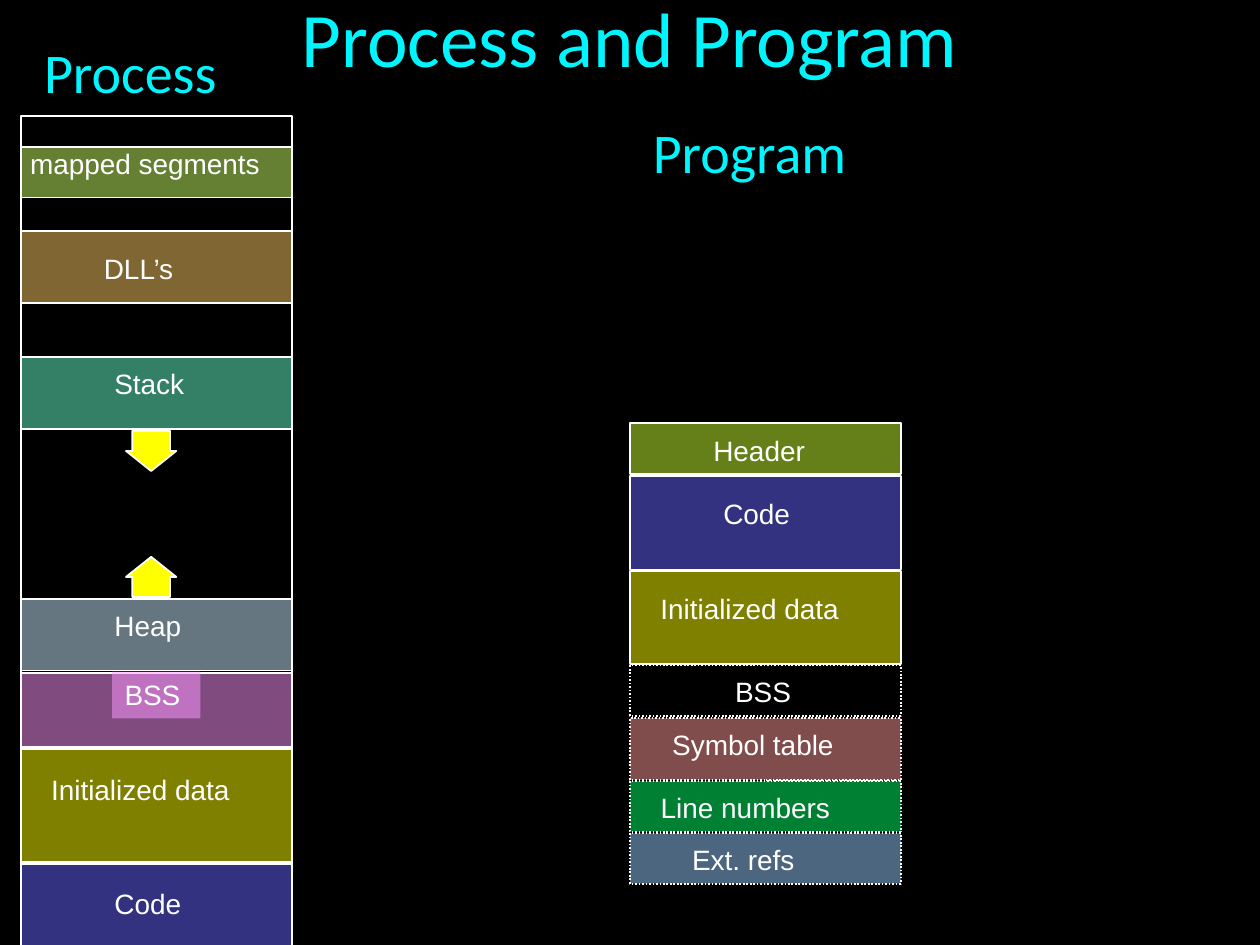
from dataclasses import dataclass

from lxml import etree
from pptx import Presentation
from pptx.dml.color import RGBColor
from pptx.enum import dml, shapes, text
from pptx.oxml import ns
from pptx.util import Pt


@dataclass(frozen=True)
class Theme:
    background: str = "000000"
    heading: str = "00F6FF"
    heading_outline: str = "5DD4FF"
    ink: str = "FFFFFF"
    arrow: str = "FFFF00"
    heading_font: str = "Calibri"
    label_font: str = "Arial"
    title_size: int = 44
    heading_size: int = 32
    label_size: int = 16
    line: float = 1


THEME = Theme()
CODE, DATA, BSS = "6565FF", "FFFF00", "FF99FF"

# Content, in points: placeholder text, box
TITLE = ("Process and Program", (18, 0, 684, 41.8))
HEADINGS = [
    ("Process", (18, 18, 336, 428.4)),
    ("Program", (365.8, 63.4, 342, 428.4)),
]

# Segments: label, fill, top, height, label left (from column), label top, label width
PROCESS_LEFT, PROGRAM_LEFT, COLUMN_WIDTH = 12.1, 360, 154.8
PROCESS_FRAME = (66.2, 491)
LABEL_HEIGHT = 26.7
PROCESS = [
    ("Code", CODE, 493.9, 64, 46.2, 503.3, 52.6),
    ("Initialized data", DATA, 427.9, 64.6, 10, 437.8, 116.6),
    ("BSS", BSS, 384.7, 42.2, 52, 383.8, 50.4),
    ("Heap", "CCECFF", 342.2, 41, 46.2, 344.4, 52.6),
    ("Stack", "66FFCC", 204.2, 41, 46.2, 206.2, 54.7),
    ("DLL’s", "FFCC66", 132.2, 41, 40.2, 140.4, 55.4),
    ("mapped segments", "CCFF66", 84.2, 28.8, -2, 80.2, 146.2),
]
PROGRAM = [
    ("Header", "CCFF33", 241.9, 28.8, 40.3, 244.3, 67),
    ("Code", CODE, 272.2, 53.3, 46.1, 280.3, 52.6),
    ("Initialized data", DATA, 326.2, 53.3, 10.1, 334.3, 116.6),
    ("BSS", None, 380.2, 28.8, 52.6, 382, 46.8),
    ("Symbol table", "FF9999", 410.4, 35.3, 16.6, 412.2, 107.3),
    ("Line numbers", "00FF66", 446.4, 28.8, 10.1, 448.2, 111.6),
    ("Ext. refs", "99CCFF", 476.2, 28.8, 28.1, 478.1, 73.4),
]
OPTIONAL_SEGMENTS = {"BSS", "Symbol table", "Line numbers", "Ext. refs"}
ARROWS = [
    (shapes.MSO_SHAPE.UP_ARROW, 318.2),
    (shapes.MSO_SHAPE.DOWN_ARROW, 246.2),
]
ARROW_LEFT, ARROW_WIDTH, ARROW_HEIGHT = 72, 28.8, 23


def color(value):
    return RGBColor.from_string(value)


def points(box):
    return [Pt(value) for value in box]


def paint(shape, fill, half_clear=False):
    if fill is None:
        shape.fill.background()
        return
    shape.fill.solid()
    shape.fill.fore_color.rgb = color(fill)
    if half_clear:
        rgb = shape.fill._xPr.find(".//" + ns.qn("a:srgbClr"))
        etree.SubElement(rgb, ns.qn("a:alpha"), val="50000")


def add_outlined(parent, kind, box, fill=None, half_clear=False, dotted=False):
    shape = parent.add_shape(kind, *points(box))
    shape.shadow.inherit = False
    paint(shape, fill, half_clear)
    shape.line.color.rgb = color(THEME.ink)
    shape.line.width = Pt(THEME.line)
    if dotted:
        shape.line.dash_style = dml.MSO_LINE.ROUND_DOT
    return shape


def write(paragraph, words, font, size, ink):
    run = paragraph.add_run()
    run.text = words
    run.font.name = font
    run.font.size = Pt(size)
    run.font.color.rgb = color(ink)
    return run


def add_label(parent, words, box, align, fill=None):
    label = parent.add_textbox(*points(box))
    paint(label, fill, half_clear=True)
    label.text_frame.word_wrap = fill is not None
    label.text_frame.auto_size = text.MSO_AUTO_SIZE.SHAPE_TO_FIT_TEXT
    paragraph = label.text_frame.paragraphs[0]
    paragraph.alignment = align
    write(paragraph, words, THEME.label_font, THEME.label_size, THEME.ink)


def add_column(parent, left, segments, align, is_program):
    for words, fill, top, height, label_left, label_top, label_width in segments:
        dotted = is_program and words in OPTIONAL_SEGMENTS
        add_outlined(parent, shapes.MSO_SHAPE.RECTANGLE,
                     (left, top, COLUMN_WIDTH, height), fill, True, dotted)
        label_fill = BSS if words == "BSS" and not is_program else None
        add_label(parent, words,
                  (left + label_left, label_top, label_width, LABEL_HEIGHT),
                  align, label_fill)


def fill_placeholder(placeholder, words, box, size):
    placeholder.left, placeholder.top, placeholder.width, placeholder.height = points(box)
    placeholder.text_frame.auto_size = text.MSO_AUTO_SIZE.NONE
    paragraph = placeholder.text_frame.paragraphs[0]
    return paragraph, write(paragraph, words, THEME.heading_font, size, THEME.heading)


def main():
    presentation = Presentation()
    presentation.slide_width, presentation.slide_height = Pt(720), Pt(540)
    slide = presentation.slides.add_slide(presentation.slide_layouts[3])
    slide.background.fill.solid()
    slide.background.fill.fore_color.rgb = color(THEME.background)
    title, *bodies = slide.placeholders

    # Title with a thin outline on its letters
    paragraph, run = fill_placeholder(title, *TITLE, THEME.title_size)
    paragraph.alignment = text.PP_ALIGN.CENTER
    title.text_frame.vertical_anchor = text.MSO_ANCHOR.MIDDLE
    outline = etree.Element(ns.qn("a:ln"), w=str(Pt(0.75)))
    solid = etree.SubElement(outline, ns.qn("a:solidFill"))
    etree.SubElement(solid, ns.qn("a:srgbClr"), val=THEME.heading_outline)
    run.font._element.insert(0, outline)

    # Column headings, without bullets
    for body, (words, box) in zip(bodies, HEADINGS):
        paragraph, _ = fill_placeholder(body, words, box, THEME.heading_size)
        properties = paragraph._p.get_or_add_pPr()
        properties.set("marL", "0")
        properties.set("indent", "0")
        etree.SubElement(properties, ns.qn("a:buNone"))

    # Process memory: frame, segments, growth arrows
    frame_top, frame_height = PROCESS_FRAME
    add_outlined(slide.shapes, shapes.MSO_SHAPE.RECTANGLE,
                 (PROCESS_LEFT, frame_top, COLUMN_WIDTH, frame_height))
    add_column(slide.shapes, PROCESS_LEFT, PROCESS, text.PP_ALIGN.LEFT, False)
    for kind, top in ARROWS:
        arrow = add_outlined(slide.shapes, kind,
                             (ARROW_LEFT, top, ARROW_WIDTH, ARROW_HEIGHT), THEME.arrow)
        arrow.adjustments[0] = 0.75
        arrow.adjustments[1] = 0.5

    # Program file: one group of segments
    program = slide.shapes.add_group_shape()
    add_column(program.shapes, PROGRAM_LEFT, PROGRAM, text.PP_ALIGN.CENTER, True)

    presentation.save("out.pptx")


if __name__ == "__main__":
    main()
